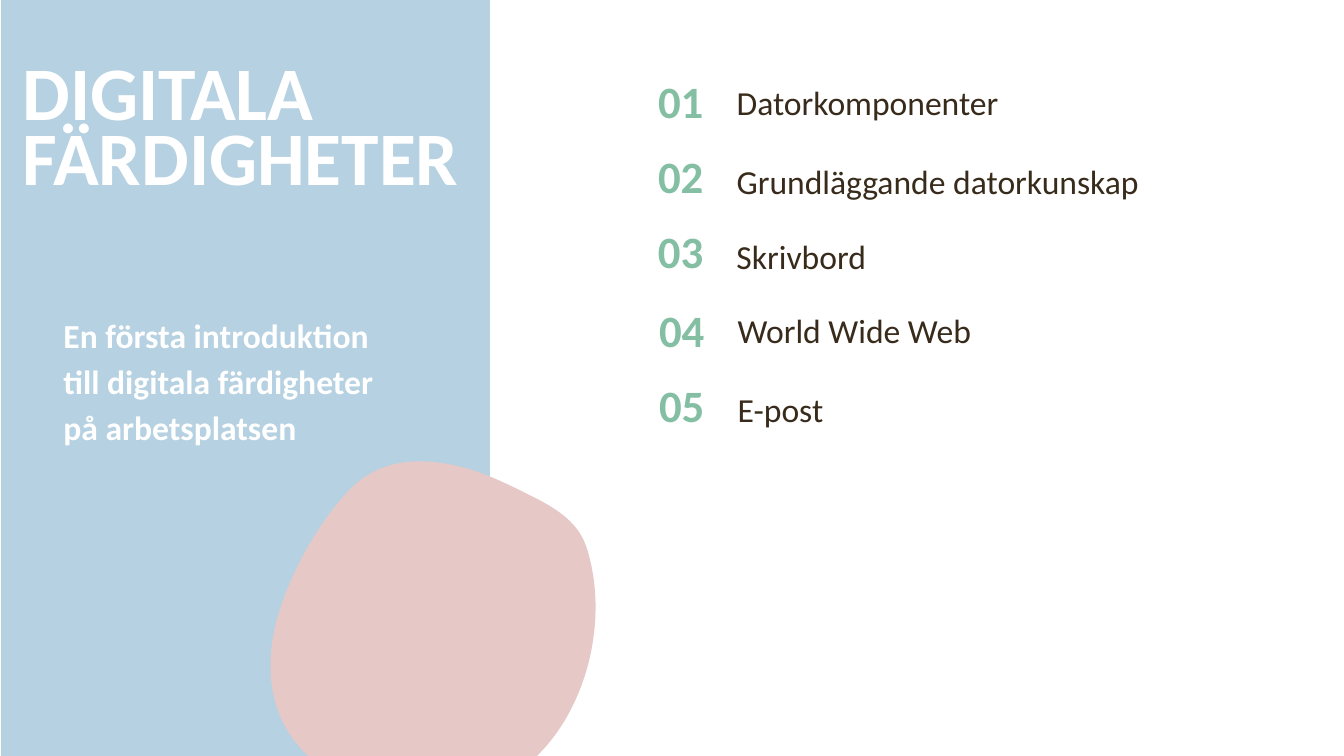
from pptx import Presentation
from pptx.dml.color import RGBColor
from pptx.enum.shapes import MSO_SHAPE
from pptx.enum.text import MSO_ANCHOR, MSO_AUTO_SIZE, PP_ALIGN
from pptx.oxml.ns import qn
from pptx.util import Cm, Pt
from lxml import etree

RECT = MSO_SHAPE.RECTANGLE
TOP, MIDDLE = MSO_ANCHOR.TOP, MSO_ANCHOR.MIDDLE
FIXED = MSO_AUTO_SIZE.NONE
LEFT = PP_ALIGN.LEFT

TITLE = "DIGITALA FÄRDIGHETER"
INTRO = "En första introduktion till digitala färdigheter på arbetsplatsen"
# Topic and its line spacing
TOPICS = [
    ("Datorkomponenter", 0.9),
    ("Grundläggande datorkunskap", 1.07),
    ("Skrivbord", 1.07),
    ("World Wide Web", 0.9),
    ("E-post", 1.07),
]
COLORS = {
    "panel": "B6D1E1",
    "blob": "E6C8C7",
    "number": "84BFA4",
    "topic": "382B1B",
    "white": "FFFFFF",
}
FONT = "Calibri"

# Bézier outline in cm: its frame, a start, then two handles and an end per curve
BLOB = (6.83, 11.63, 8.18, 8.43)
START = (11.79, 11.81)
CURVES = [
    ((10.69, 11.51), (9.55, 11.48), (8.69, 12.47)),
    ((7.85, 13.41), (7.04, 14.94), (6.86, 16.18)),
    ((6.45, 19.13), (9.07, 20.4), (11.71, 19.99)),
    ((14.27, 19.58), (15.57, 16.21), (14.78, 13.79)),
    ((14.55, 13.08), (13.87, 12.73), (13.23, 12.42)),
    ((12.78, 12.19), (12.29, 11.96), START),
]

ROW_TOP, ROW_STEP, ROW_HIGH = 1.68, 1.89, 1.9
NUM_LEFT, NUM_WIDE = 16.33, 1.96
TOPIC_LEFT, TOPIC_WIDE = 18.31, 13.34
# The last rows sit slightly lower and further right
LATE_ROW, LATE_DOWN, LATE_RIGHT = 3, 0.09, 0.03


def paint(shape, color):
    shape.fill.solid()
    shape.fill.fore_color.rgb = RGBColor.from_string(COLORS[color])
    shape.line.fill.background()
    shape.shadow.inherit = False


def write(box, area, text, size, color, bold, spacing, anchor):
    """Place a box (area in cm) and fill it with one plain paragraph."""
    box.left, box.top, box.width, box.height = map(Cm, area)
    frame = box.text_frame
    frame.word_wrap = True
    frame.auto_size = FIXED
    frame.vertical_anchor = anchor
    para = frame.paragraphs[0]
    props = para._p.get_or_add_pPr()
    props.set("marL", "0")
    props.set("indent", "0")
    etree.SubElement(props, qn("a:buNone"))
    para.alignment = LEFT
    para.line_spacing = spacing
    para.space_before = para.space_after = Pt(0)
    run = para.add_run()
    run.text = text
    run.font.name = FONT
    run.font.size = Pt(size)
    run.font.bold = bold
    run.font.color.rgb = RGBColor.from_string(COLORS[color])


def draw_blob(shapes):
    """Build a freeform as large as the frame, then give it the curved path."""
    left, top, wide, high = map(Cm, BLOB)
    pen = shapes.build_freeform(left, top)
    pen.add_line_segments([(left + wide, top), (left + wide, top + high),
                           (left, top + high)])
    blob = pen.convert_to_shape()
    track = blob._element.find(".//" + qn("a:path"))
    for part in list(track):
        track.remove(part)

    def add(tag, *points):
        part = etree.SubElement(track, qn(tag))
        for x, y in points:
            etree.SubElement(part, qn("a:pt"),
                             x=str(Cm(x) - left), y=str(Cm(y) - top))

    add("a:moveTo", START)
    for curve in CURVES:
        add("a:cubicBezTo", *curve)
    add("a:close")
    paint(blob, "blob")


def main():
    deck = Presentation()
    deck.slide_width, deck.slide_height = Cm(33.87), Cm(19.05)
    slide = deck.slides.add_slide(deck.slide_layouts.get_by_name("Comparison"))
    shapes = slide.shapes
    title = shapes.title
    bodies = [p for p in slide.placeholders if p.placeholder_format.idx in range(1, 5)]

    panel = shapes.add_shape(RECT, Cm(0.03), 0, Cm(12.32), deck.slide_height)
    paint(panel, "panel")
    title._element.addprevious(panel._element)
    write(title, (0.32, 1.68, 11.94, 3.76), TITLE, 54, "white", True, Pt(46), TOP)
    draw_blob(shapes)

    def take():
        """Use up the body placeholders before adding text boxes."""
        return bodies.pop(0) if bodies else shapes.add_textbox(0, 0, 0, 0)

    for row, (topic, spacing) in enumerate(TOPICS):
        late = row >= LATE_ROW
        top = ROW_TOP + row * ROW_STEP + late * LATE_DOWN
        shift = late * LATE_RIGHT
        write(take(), (NUM_LEFT + shift, top, NUM_WIDE, ROW_HIGH),
              f"{row + 1:02}", 32, "number", True, 0.9, MIDDLE)
        write(take(), (TOPIC_LEFT + shift, top, TOPIC_WIDE, ROW_HIGH),
              topic, 24, "topic", False, spacing, MIDDLE)

    write(take(), (1.35, 7.65, 8.94, 3.73), INTRO, 24, "white", True, 1.15, TOP)
    deck.save("out.pptx")


if __name__ == "__main__":
    main()
